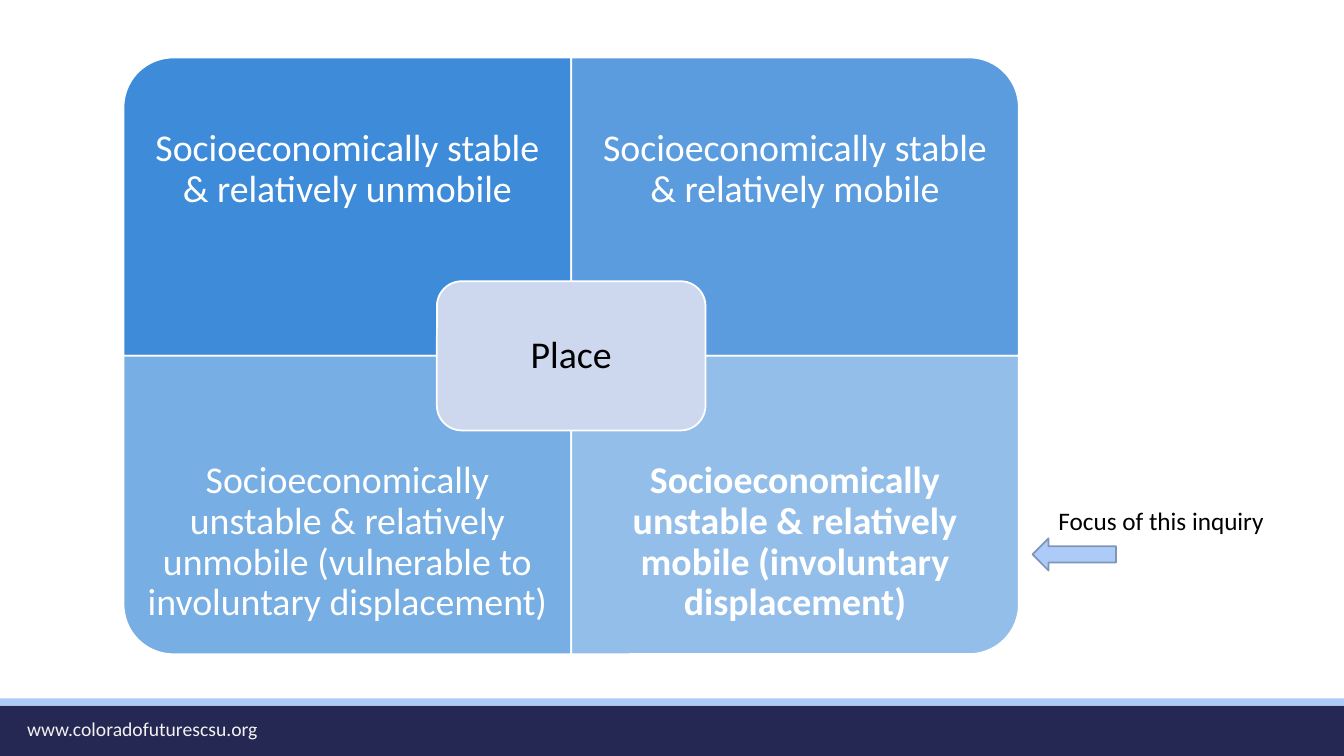
import pptx
import pptx.util
import pptx.dml.color
import pptx.enum.shapes
import pptx.enum.text
import pptx.oxml.ns
import lxml.etree

Inches = pptx.util.Inches
SHAPES = pptx.enum.shapes.MSO_SHAPE
ALIGN = pptx.enum.text.PP_ALIGN
ANCHOR = pptx.enum.text.MSO_ANCHOR

# Content: text, column, row, rotation, opacity in percent, bold
QUADRANTS = [
    ("Socioeconomically stable & relatively unmobile", 0, 0, 270, 90, False),
    ("Socioeconomically stable & relatively mobile", 1, 0, 0, 77, False),
    ("Socioeconomically unstable & relatively unmobile "
     "(vulnerable to involuntary displacement)", 0, 1, 180, 63, False),
    ("Socioeconomically unstable & relatively mobile "
     "(involuntary displacement)", 1, 1, 90, 50, True),
]
CENTER_LABEL = "Place"
FOCUS_LABEL = "Focus of this inquiry"
WEB_ADDRESS = "www.coloradofuturescsu.org"

THEME = {
    "font": "Calibri",
    "navy": "242852", "pale_blue": "ACCBF9", "blue": "297FD5",
    "lavender": "CDD8EF", "arrow_line": "7F96B8",
    "white": "FFFFFF", "off_white": "F2F2F2", "black": "000000",
    "matrix_size": 27, "focus_size": 18, "footer_size": 14, "line_width": 1.25,
}

# Layout in inches
SLIDE_WIDTH, SLIDE_HEIGHT = 13.33, 7.5
MATRIX_LEFT, MATRIX_TOP = 1.225, 0.57
CELL_WIDTH, CELL_HEIGHT = 4.44, 2.96
TEXT_HEIGHT = CELL_HEIGHT * 0.75
CENTER_WIDTH, CENTER_HEIGHT = CELL_WIDTH * 0.6, CELL_HEIGHT * 0.5


def color(name):
    return pptx.dml.color.RGBColor.from_string(THEME[name])


def add_block(slide, kind, box, fill, line=None, opacity=None, rotation=0):
    shape = slide.shapes.add_shape(kind, *map(Inches, box))
    shape.shadow.inherit = False
    shape.rotation = rotation
    shape.fill.solid()
    shape.fill.fore_color.rgb = color(fill)
    if opacity is not None:
        fill_color = shape.fill._xPr.find(".//" + pptx.oxml.ns.qn("a:srgbClr"))
        alpha = lxml.etree.SubElement(fill_color, pptx.oxml.ns.qn("a:alpha"))
        alpha.set("val", str(opacity * 1000))
    if line:
        shape.line.color.rgb = color(line)
        shape.line.width = pptx.util.Pt(THEME["line_width"])
    else:
        shape.line.fill.background()
    return shape


def add_label(slide, text, box, size, font_color, bold=False,
              inset=None, wrap=True):
    frame = slide.shapes.add_textbox(*map(Inches, box)).text_frame
    frame.word_wrap = wrap
    paragraph = frame.paragraphs[0]
    paragraph.text = text
    font_format = {"name": THEME["font"], "bold": bold,
                   "size": pptx.util.Pt(THEME[size])}
    for name, value in font_format.items():
        setattr(paragraph.font, name, value)
    paragraph.font.color.rgb = color(font_color)
    # Matrix labels are inset and centred
    if inset is not None:
        frame.vertical_anchor = ANCHOR.MIDDLE
        for side in ("left", "right", "top", "bottom"):
            setattr(frame, "margin_" + side, Inches(inset))
        paragraph.alignment = ALIGN.CENTER
        paragraph.line_spacing = 0.9


def add_footer(slide):
    add_block(slide, SHAPES.RECTANGLE, (0, 7, SLIDE_WIDTH, 0.5), "navy")
    add_block(slide, SHAPES.RECTANGLE, (0, 6.93, SLIDE_WIDTH, 0.07), "pale_blue")
    add_label(slide, WEB_ADDRESS, (0.17, 7.06, 3.23, 0.4),
              "footer_size", "off_white")


def add_matrix(slide):
    for text, column, row, rotation, opacity, bold in QUADRANTS:
        left = MATRIX_LEFT + column * CELL_WIDTH
        top = MATRIX_TOP + row * CELL_HEIGHT
        # A quarter turn swaps width and height around the cell's centre
        width, height = CELL_WIDTH, CELL_HEIGHT
        if rotation % 180:
            width, height = height, width
        box = (left + (CELL_WIDTH - width) / 2,
               top + (CELL_HEIGHT - height) / 2, width, height)
        add_block(slide, SHAPES.ROUND_1_RECTANGLE, box, "blue", "white",
                  opacity, rotation)
        # Text keeps to the outer three quarters of the cell
        text_top = top + row * (CELL_HEIGHT - TEXT_HEIGHT)
        add_label(slide, text, (left, text_top, CELL_WIDTH, TEXT_HEIGHT),
                  "matrix_size", "white", bold, inset=0.21)

    # Centre label
    center_box = (MATRIX_LEFT + CELL_WIDTH - CENTER_WIDTH / 2,
                  MATRIX_TOP + CELL_HEIGHT - CENTER_HEIGHT / 2,
                  CENTER_WIDTH, CENTER_HEIGHT)
    add_block(slide, SHAPES.ROUNDED_RECTANGLE, center_box, "lavender", "white")
    add_label(slide, CENTER_LABEL, center_box, "matrix_size", "black", inset=0.18)


def add_focus_note(slide):
    add_label(slide, FOCUS_LABEL, (10.4, 4.96, 2.27, 0.4),
              "focus_size", "black", wrap=False)
    add_block(slide, SHAPES.LEFT_ARROW, (10.24, 5.34, 0.83, 0.32),
              "pale_blue", "arrow_line")


def main():
    presentation = pptx.Presentation()
    presentation.slide_width = Inches(SLIDE_WIDTH)
    presentation.slide_height = Inches(SLIDE_HEIGHT)
    slide = presentation.slides.add_slide(presentation.slide_layouts[6])
    add_footer(slide)
    add_matrix(slide)
    add_focus_note(slide)
    presentation.save("out.pptx")


if __name__ == "__main__":
    main()
